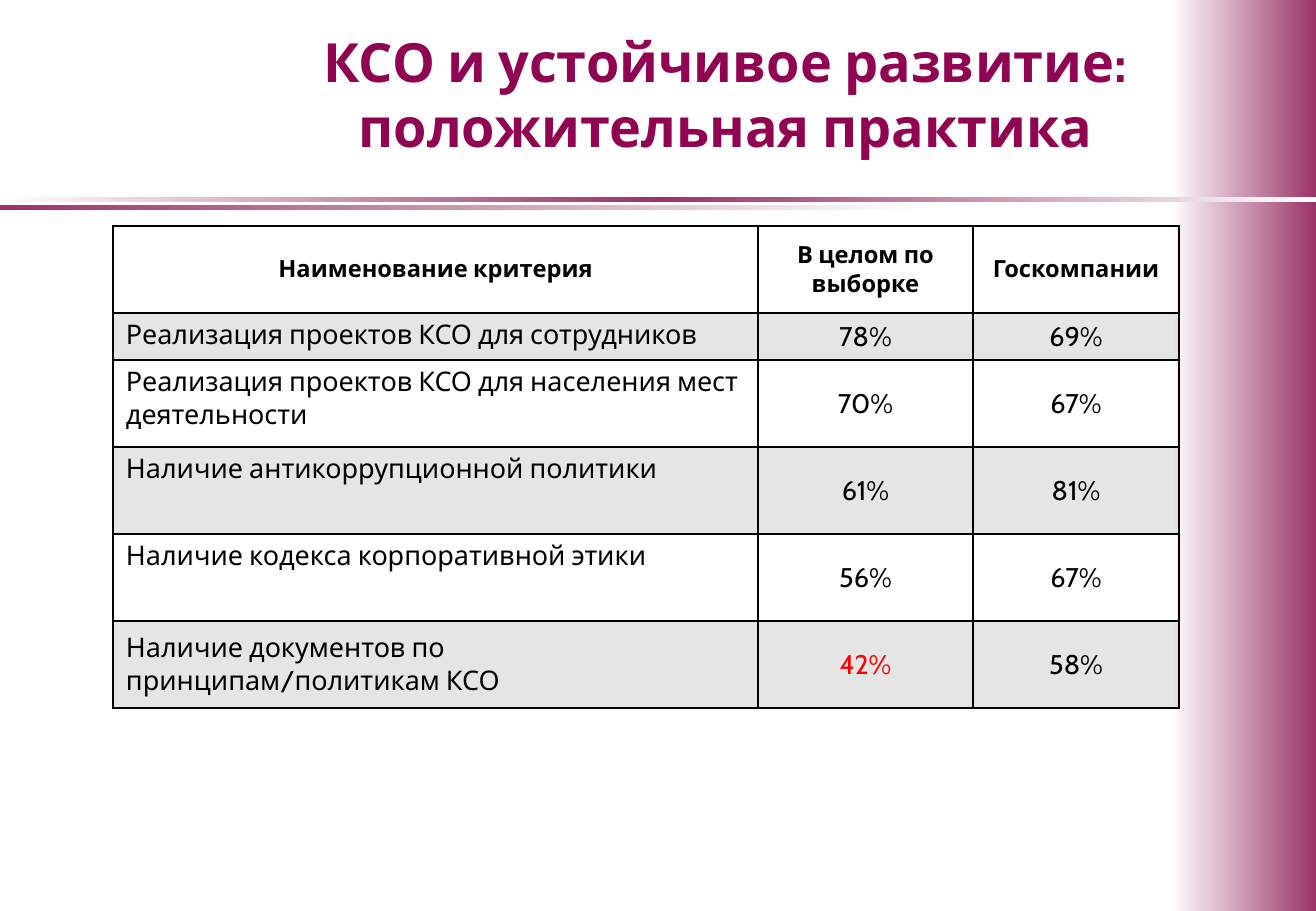
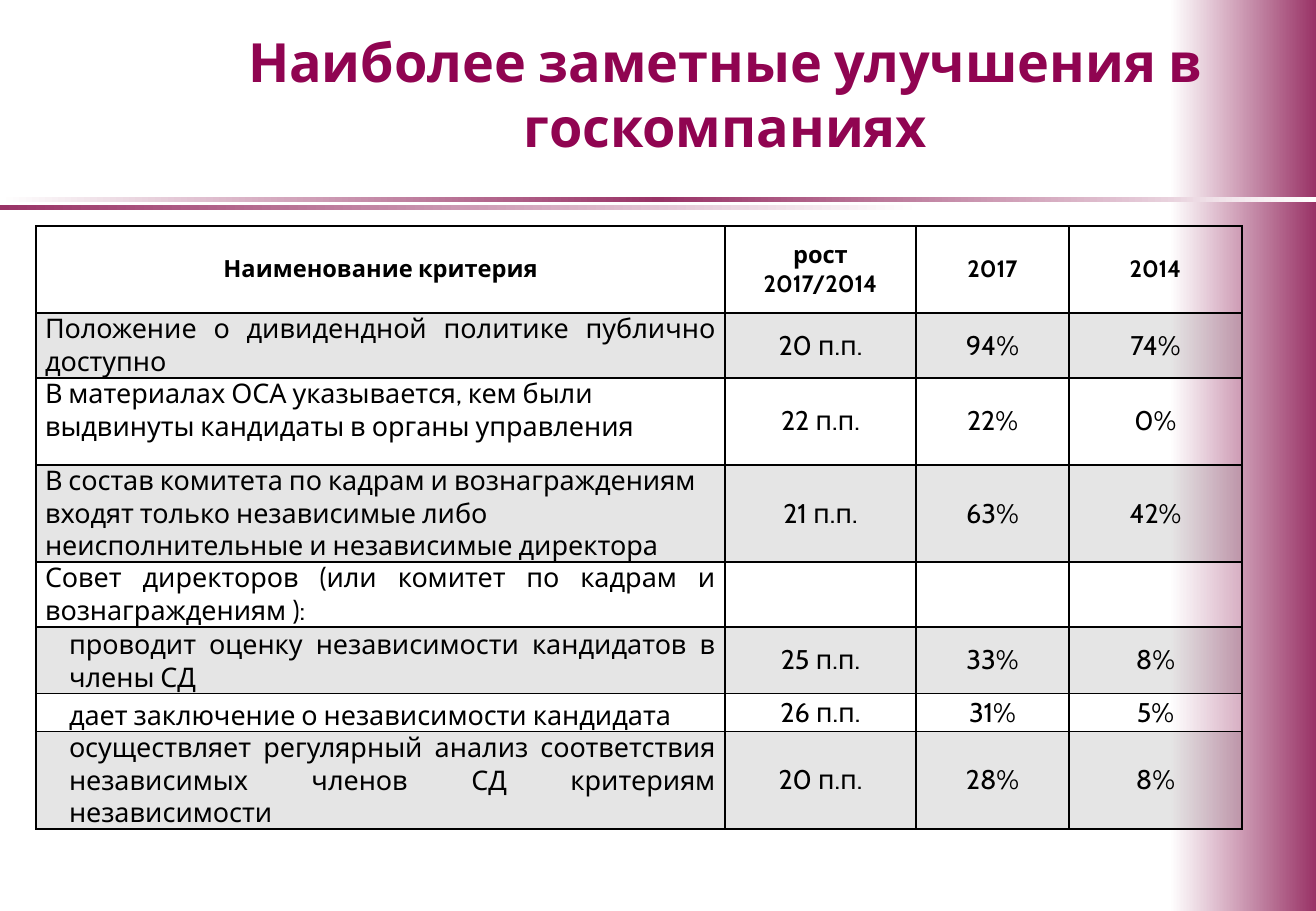
from lxml import etree
from pptx import Presentation
from pptx.dml.color import RGBColor
from pptx.enum.shapes import MSO_SHAPE
from pptx.enum.text import MSO_ANCHOR, PP_ALIGN
from pptx.oxml.ns import qn
from pptx.util import Pt

PX = 7527
PAGE_WIDTH, PAGE_HEIGHT = 1316, 911
BLANK_LAYOUT = 6
FONT = "Cabin"
RECTANGLE = MSO_SHAPE.RECTANGLE
TOP, MIDDLE, BOTTOM = MSO_ANCHOR.TOP, MSO_ANCHOR.MIDDLE, MSO_ANCHOR.BOTTOM
LEFT, CENTER, JUSTIFY = PP_ALIGN.LEFT, PP_ALIGN.CENTER, PP_ALIGN.JUSTIFY

COLORS = {
    "title": "900451",
    "band": "993366",
    "white": "FFFFFF",
    "black": "000000",
    "gray": "808080",
    "red": "FF0000",
}
TINT_OPACITY = 20

# left, top, width, height, evenly spaced gradient colours
BANDS = [
    (1170, 0, 146, PAGE_HEIGHT, ["white", "band"]),
    (0, 197, PAGE_WIDTH, 5, ["white", "band", "white"]),
    (0, 205, 921, 5, ["band", "white"]),
]
TITLE_BOX = (163, 0, 1125, 186)
TABLE_TOP = 226

# Criterion styles: anchor, alignment, left indent
STYLES = {
    "top": (TOP, LEFT, 0),
    "middle": (MIDDLE, LEFT, 0),
    "justified": (MIDDLE, JUSTIFY, 0),
    "group": (BOTTOM, JUSTIFY, 0),
    "item": (BOTTOM, JUSTIFY, 24),
}

# Rows: height, criterion, style, tint, values
SLIDES = [
    {
        "title": "КСО и устойчивое развитие: положительная практика",
        "left": 113,
        "columns": [645, 215, 206],
        "margins": (13, 6),
        "header": ["Наименование критерия", "В целом по выборке", "Госкомпании"],
        "rows": [
            (47, "Реализация проектов КСО для сотрудников", "top", "gray", ["78%", "69%"]),
            (87, "Реализация проектов КСО для населения мест деятельности", "top", None,
             ["70%", "67%"]),
            (87, "Наличие антикоррупционной политики", "top", "gray", ["61%", "81%"]),
            (87, "Наличие кодекса корпоративной этики", "top", None, ["56%", "67%"]),
            (87, "Наличие документов по принципам/политикам КСО", "middle", "gray",
             ["42%", "58%"]),
        ],
        "highlight": "42%",
    },
    {
        "title": "Наиболее заметные улучшения в госкомпаниях",
        "left": 36,
        "columns": [689, 191, 153, 173],
        "margins": (9, 0),
        "header": ["Наименование критерия", "рост 2017/2014", "2017", "2014"],
        "rows": [
            (47, "Положение о дивидендной политике публично доступно", "justified", "gray",
             ["20 п.п.", "94%", "74%"]),
            (87, "В материалах ОСА указывается, кем были выдвинуты кандидаты в органы управления",
             "top", None, ["22 п.п.", "22%", "0%"]),
            (87, "В состав комитета по кадрам и вознаграждениям входят только независимые "
             "либо неисполнительные и независимые директора", "top", "gray",
             ["21 п.п.", "63%", "42%"]),
            (52, "Совет директоров (или комитет по кадрам и вознаграждениям ):", "group", "white",
             ["", "", ""]),
            (67, "проводит оценку независимости кандидатов в члены СД", "item", "gray",
             ["25 п.п.", "33%", "8%"]),
            (38, "дает заключение о независимости кандидата", "item", "white",
             ["26 п.п.", "31%", "5%"]),
            (87, "осуществляет регулярный анализ соответствия независимых членов СД "
             "критериям независимости", "item", "gray", ["20 п.п.", "28%", "8%"]),
        ],
        "highlight": None,
    },
]
HEADER_HEIGHT = 87


def to_emu(lengths):
    return [length * PX for length in lengths]


def rgb(name):
    return RGBColor.from_string(COLORS[name])


def write_text(frame, text, size=16, color="black", bold=False, align=CENTER, indent=0):
    para = frame.paragraphs[0]
    para.alignment = align
    if indent:
        properties = para._p.get_or_add_pPr()
        properties.set("marL", str(indent * PX))
        properties.set("indent", "0")
    span = para.add_run()
    span.text = text
    span.font.name = FONT
    span.font.size = Pt(size)
    span.font.bold = bold
    span.font.color.rgb = rgb(color)


def add_band(page, left, top, width, height, colors):
    band = page.shapes.add_shape(RECTANGLE, *to_emu((left, top, width, height)))
    band.shadow.inherit = False
    band.line.fill.background()
    band.fill.gradient()
    band.fill.gradient_angle = 0
    stops = band.element.spPr.find(".//" + qn("a:gsLst"))
    stops.clear()
    for index, color in enumerate(colors):
        position = 100000 * index // (len(colors) - 1)
        stop = etree.SubElement(stops, qn("a:gs"), pos=str(position))
        etree.SubElement(stop, qn("a:srgbClr"), val=COLORS[color])


def add_title(page, text):
    box = page.shapes.add_textbox(*to_emu(TITLE_BOX))
    box.text_frame.word_wrap = True
    box.text_frame.vertical_anchor = MIDDLE
    write_text(box.text_frame, text, size=32, color="title", bold=True)


def set_borders(cell, top=1, bottom=1):
    """Draw black borders, with the top and bottom widths in points."""
    properties = cell._tc.get_or_add_tcPr()
    widths = {"lnL": 1, "lnR": 1, "lnT": top, "lnB": bottom}
    for index, (side, width) in enumerate(widths.items()):
        line = etree.Element(qn("a:" + side), w=str(Pt(width)))
        fill = etree.SubElement(line, qn("a:solidFill"))
        etree.SubElement(fill, qn("a:srgbClr"), val=COLORS["black"])
        properties.insert(index, line)


def set_tint(cell, tint):
    if tint is None:
        cell.fill.background()
        return
    cell.fill.solid()
    cell.fill.fore_color.rgb = rgb(tint)
    color = cell._tc.tcPr.find(qn("a:solidFill")).find(qn("a:srgbClr"))
    etree.SubElement(color, qn("a:alpha"), val=str(TINT_OPACITY * 1000))


def fill_cell(cell, text, margins, tint=None, anchor=MIDDLE, top=1, bottom=1, **text_format):
    cell.margin_left = cell.margin_right = margins[0] * PX
    cell.margin_top = cell.margin_bottom = margins[1] * PX
    cell.vertical_anchor = anchor
    set_tint(cell, tint)
    set_borders(cell, top, bottom)
    if text:
        write_text(cell.text_frame, text, **text_format)


def add_criteria_table(page, content):
    columns, rows, margins = content["columns"], content["rows"], content["margins"]
    heights = [HEADER_HEIGHT] + [row[0] for row in rows]
    area = to_emu((content["left"], TABLE_TOP, sum(columns), sum(heights)))
    table = page.shapes.add_table(len(heights), len(columns), *area).table
    table.first_row = table.horz_banding = False
    for column, width in zip(table.columns, columns):
        column.width = width * PX
    for table_row, height in zip(table.rows, heights):
        table_row.height = height * PX

    for index, heading in enumerate(content["header"]):
        fill_cell(table.cell(0, index), heading, margins, bottom=2, size=14, bold=True)
    for number, (_, criterion, style, tint, values) in enumerate(rows, start=1):
        top = 2 if number == 1 else 1
        anchor, align, indent = STYLES[style]
        fill_cell(table.cell(number, 0), criterion, margins, tint, anchor, top,
                  align=align, indent=indent)
        for index, value in enumerate(values, start=1):
            color = "red" if value == content["highlight"] else "black"
            fill_cell(table.cell(number, index), value, margins, tint, top=top, color=color)


def main():
    deck = Presentation()
    deck.slide_width, deck.slide_height = to_emu((PAGE_WIDTH, PAGE_HEIGHT))
    for content in SLIDES:
        page = deck.slides.add_slide(deck.slide_layouts[BLANK_LAYOUT])
        for band in BANDS:
            add_band(page, *band)
        add_title(page, content["title"])
        add_criteria_table(page, content)
    deck.save("out.pptx")


if __name__ == "__main__":
    main()
